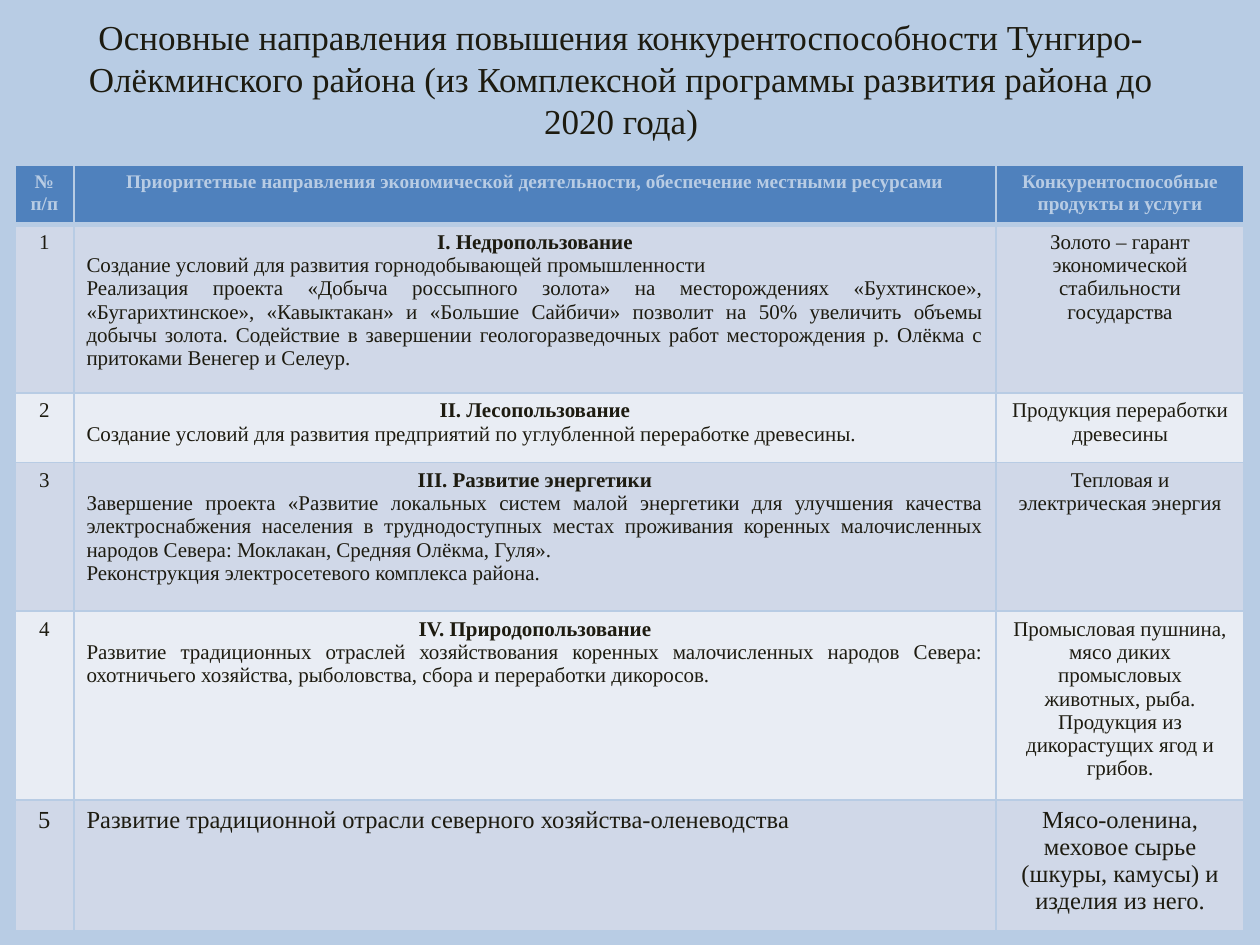
from dataclasses import dataclass

from lxml.etree import SubElement
from pptx import Presentation
from pptx.dml.color import RGBColor
from pptx.enum.text import MSO_ANCHOR as Anchor, PP_ALIGN as Align
from pptx.oxml.ns import qn
from pptx.util import Cm, Pt


@dataclass(frozen=True)
class Theme:
    font: str = "Times New Roman"
    background: str = "B8CCE4"
    ink: str = "1D1B10"
    header_fill: str = "4F81BD"
    band_fills: tuple = ("D0D8E8", "E9EDF4")
    title_size: int = 20
    header_size: int = 11
    body_size: int = 12
    large_size: int = 14
    thin_line: int = 1
    thick_line: int = 3


# Each paragraph is (text, alignment, bold)
def centered(text, bold=False):
    return text, Align.CENTER, bold


def left(text):
    return text, Align.LEFT, False


def justified(text):
    return text, Align.JUSTIFY, False


class SlideBuilder:
    def __init__(self, slide, theme):
        self.slide = slide
        self.theme = theme

    def set_background(self):
        fill = self.slide.background.fill
        fill.solid()
        fill.fore_color.rgb = RGBColor.from_string(self.theme.background)

    def fill_text(self, text_frame, paragraphs, size, color):
        text_frame.text = "\n".join(text for text, _, _ in paragraphs)
        for paragraph, (_, alignment, bold) in zip(text_frame.paragraphs, paragraphs):
            paragraph.alignment = alignment
            for run in paragraph.runs:
                run.font.name = self.theme.font
                run.font.size = Pt(size)
                run.font.bold = bold
                run.font.color.rgb = RGBColor.from_string(color)

    def add_title(self, text, x, y, width, height):
        shape = self.slide.shapes.add_textbox(Cm(x), Cm(y), Cm(width), Cm(height))
        text_frame = shape.text_frame
        text_frame.word_wrap = True
        text_frame.vertical_anchor = Anchor.MIDDLE
        self.fill_text(text_frame, [centered(text)], self.theme.title_size, self.theme.ink)

    def set_borders(self, cell, **widths):
        properties = cell._tc.get_or_add_tcPr()
        for index, (side, width) in enumerate(widths.items()):
            line = SubElement(properties, qn(f"a:ln{side}"), w=str(Pt(width)))
            solid = SubElement(line, qn("a:solidFill"))
            SubElement(solid, qn("a:srgbClr"), val=self.theme.background)
            properties.remove(line)
            properties.insert(index, line)  # borders come before the fill

    def add_table(self, rows, x, y, widths, heights):
        theme = self.theme
        table = self.slide.shapes.add_table(
            len(rows), len(widths), Cm(x), Cm(y), Cm(sum(widths)), Cm(sum(heights))
        ).table
        for column, width in zip(table.columns, widths):
            column.width = Cm(width)
        for index, (size, contents) in enumerate(rows):
            table.rows[index].height = Cm(heights[index])
            is_header = index == 0
            fill = theme.header_fill if is_header else theme.band_fills[(index - 1) % 2]
            color = theme.background if is_header else theme.ink
            top = theme.thick_line if index == 1 else theme.thin_line
            bottom = theme.thick_line if is_header else theme.thin_line
            for cell, paragraphs in zip(table.rows[index].cells, contents):
                cell.fill.solid()
                cell.fill.fore_color.rgb = RGBColor.from_string(fill)
                self.set_borders(cell, L=theme.thin_line, R=theme.thin_line, T=top, B=bottom)
                self.fill_text(cell.text_frame, paragraphs, size, color)


def main():
    theme = Theme()
    presentation = Presentation()
    presentation.slide_width, presentation.slide_height = Cm(25.4), Cm(19.05)
    slide = presentation.slides.add_slide(presentation.slide_layouts[6])
    builder = SlideBuilder(slide, theme)
    builder.set_background()

    # Title
    builder.add_title(
        "Основные направления повышения конкурентоспособности Тунгиро-Олёкминского района "
        "(из Комплексной программы развития района до 2020 года)",
        1.09, 0.33, 22.86, 2.51,
    )

    # Table contents: header, then directions and their products
    headings = (
        "№ п/п",
        "Приоритетные направления экономической деятельности, обеспечение местными ресурсами",
        "Конкурентоспособные продукты и услуги",
    )
    directions = [
        (
            theme.body_size,
            [
                centered("I. Недропользование", bold=True),
                left("Создание условий для развития горнодобывающей промышленности"),
                justified(
                    "Реализация проекта «Добыча россыпного золота» на месторождениях «Бухтинское», "
                    "«Бугарихтинское», «Кавыктакан» и «Большие Сайбичи» позволит на 50% увеличить "
                    "объемы добычы золота. Содействие в завершении геологоразведочных работ "
                    "месторождения р. Олёкма с притоками Венегер и Селеур."
                ),
            ],
            "Золото – гарант экономической стабильности государства",
        ),
        (
            theme.body_size,
            [
                centered("II. Лесопользование", bold=True),
                justified(
                    "Создание условий для развития предприятий по углубленной переработке древесины."
                ),
            ],
            "Продукция переработки древесины",
        ),
        (
            theme.body_size,
            [
                centered("III. Развитие энергетики", bold=True),
                justified(
                    "Завершение проекта «Развитие локальных систем малой энергетики для улучшения "
                    "качества электроснабжения населения в труднодоступных местах проживания "
                    "коренных малочисленных народов Севера: Моклакан, Средняя Олёкма, Гуля»."
                ),
                justified("Реконструкция электросетевого комплекса района."),
            ],
            "Тепловая и электрическая энергия",
        ),
        (
            theme.body_size,
            [
                centered("IV. Природопользование", bold=True),
                justified(
                    "Развитие традиционных отраслей хозяйствования коренных малочисленных народов "
                    "Севера: охотничьего хозяйства, рыболовства, сбора и переработки дикоросов."
                ),
            ],
            "Промысловая пушнина, мясо диких промысловых животных, рыба. "
            "Продукция из дикорастущих ягод и грибов.",
        ),
        (
            theme.large_size,
            [left("Развитие традиционной отрасли северного хозяйства-оленеводства")],
            "Мясо-оленина, меховое сырье (шкуры, камусы) и изделия из него.",
        ),
    ]
    rows = [(theme.header_size, [[centered(text, bold=True)] for text in headings])]
    for number, (size, direction, product) in enumerate(directions, start=1):
        rows.append((size, [[centered(str(number))], direction, [centered(product)]]))

    # Table
    builder.add_table(
        rows, 0.3, 3.33,
        widths=(1.19, 18.59, 5),
        heights=(1.19, 3.4, 1.4, 3, 1.09, 1.09),
    )
    presentation.save("out.pptx")


if __name__ == "__main__":
    main()
